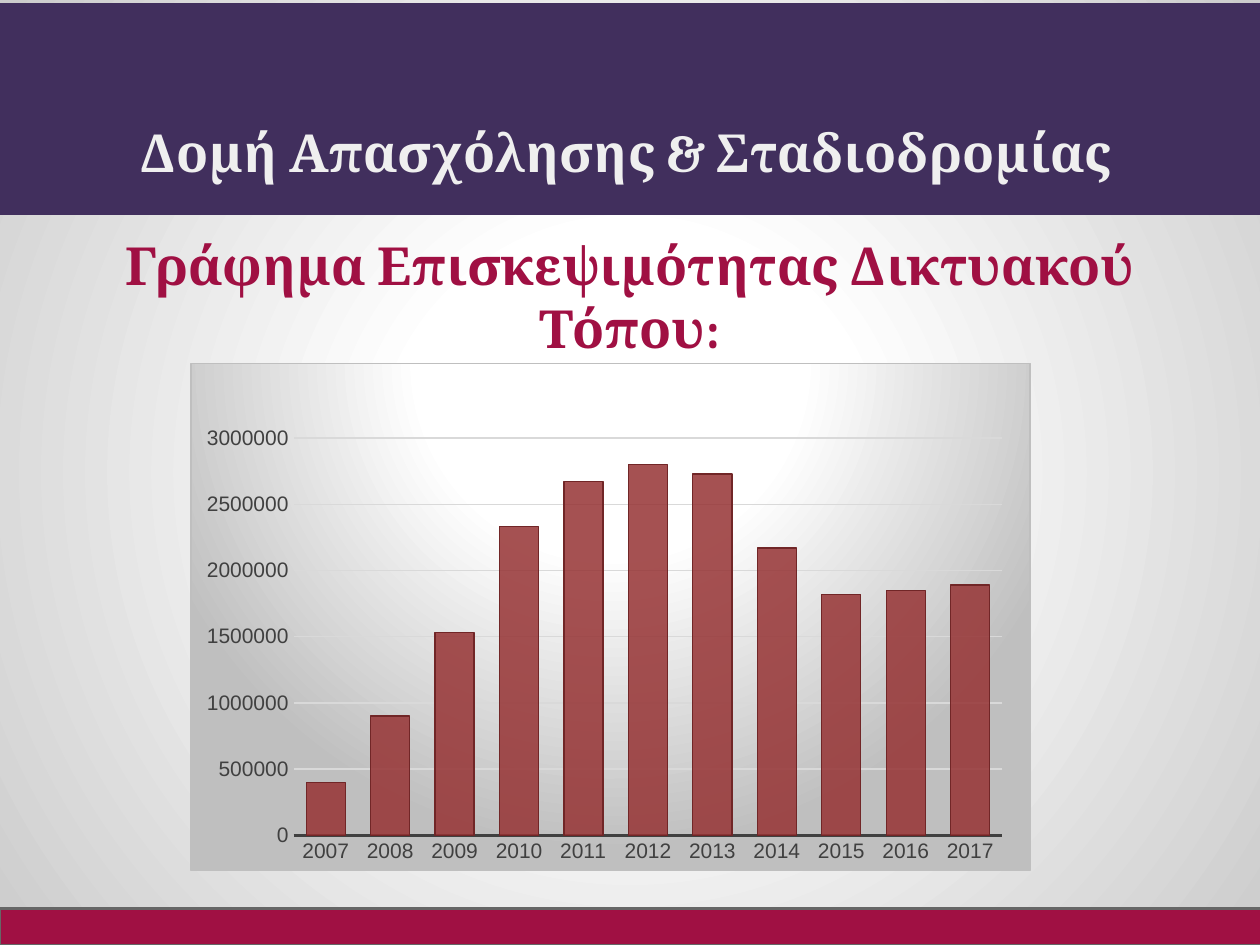
"""Build the slide with the yearly chart of website visits."""
from lxml.etree import SubElement
from pptx import Presentation
from pptx.chart.data import CategoryChartData as Data
from pptx.dml.color import RGBColor as Rgb
from pptx.enum.chart import XL_CHART_TYPE as Kind, XL_TICK_MARK as Tick
from pptx.enum.shapes import MSO_SHAPE as Shape
from pptx.enum.text import MSO_ANCHOR as Anchor, PP_ALIGN as Align
from pptx.oxml import parse_xml
from pptx.oxml.ns import nsdecls, qn
from pptx.util import Cm, Pt

hues = {
    "navy": "412F5D", "wine": "A01043", "edge": "666666", "pale": "EFEFEF",
    "bar": "963334", "rim": "712627", "text": "404040", "grid": "D9D9D9",
    "white": "FFFFFF", "mist": "CCCCCC", "gray": "BFBFBF", "black": "000000",
}
tone = {name: Rgb.from_string(code) for name, code in hues.items()}


def radial(mid, end, top, base):
    """Return the XML of a circular gradient from white to the end colour."""
    stops = [(0, "white"), (mid, "white"), (100, end)]
    marks = "".join(
        f'<a:gs pos="{pos * 1000}"><a:srgbClr val="{hues[name]}"/></a:gs>'
        for pos, name in stops)
    return (f'<a:gradFill {nsdecls("a")} rotWithShape="1"><a:gsLst>{marks}</a:gsLst>'
            f'<a:path path="circle"><a:fillToRect l="50000" t="{top * 1000}" '
            f'r="50000" b="{base * 1000}"/></a:path></a:gradFill>')


deck = Presentation()
deck.slide_width, deck.slide_height = Cm(25.4), Cm(19.05)
slide = deck.slides.add_slide(deck.slide_layouts[6])
slide.background.fill.solid()
back = slide.element.find(".//" + qn("p:bgPr"))
back.replace(back[0], parse_xml(radial(30, "mist", 50, 50)))

bands = [(0.08, 4.22, "navy", "navy"), (18.31, 0.74, "wine", "edge")]
for top, high, fill, line in bands:
    band = slide.shapes.add_shape(Shape.RECTANGLE, 0, Cm(top), Cm(25.43), Cm(high))
    band.shadow.inherit = False
    band.fill.solid()
    band.fill.fore_color.rgb = tone[fill]
    band.line.color.rgb = tone[line]
    band.line.width = Pt(1.5)

texts = [
    ("Δομή Απασχόλησης & Σταδιοδρομίας", (2.57, 0.76, 21.56, 3.18),
     Anchor.BOTTOM, Align.LEFT, "pale"),
    ("Γράφημα Επισκεψιμότητας Δικτυακού Τόπου:", (1.27, 4.45, 22.86, 13.79),
     Anchor.TOP, Align.CENTER, "wine"),
]
for words, spot, anchor, align, hue in texts:
    frame = slide.shapes.add_textbox(*map(Cm, spot)).text_frame
    frame.word_wrap = True
    frame.vertical_anchor = anchor
    frame.margin_left = frame.margin_right = Cm(0.25)
    frame.margin_top = frame.margin_bottom = Cm(0.25)
    para = frame.paragraphs[0]
    para.text = words
    para.alignment = align
    para.font.name, para.font.size, para.font.bold = "Cambria", Pt(30), True
    para.font.color.rgb = tone[hue]

data = Data()
data.categories = [str(year) for year in range(2007, 2018)]
data.add_series("Series 1", [
    400000, 900000, 1530000, 2330000, 2670000, 2800000,
    2730000, 2170000, 1820000, 1850000, 1890000])
chart = slide.shapes.add_chart(
    Kind.COLUMN_CLUSTERED, Cm(3.84), Cm(7.32), Cm(16.94), Cm(10.24), data).chart
chart.has_title = chart.has_legend = False
chart.font.name, chart.font.size = "Arial", Pt(10)
chart.font.color.rgb = tone["black"]

for axis in (chart.category_axis, chart.value_axis):
    axis.major_tick_mark = axis.minor_tick_mark = Tick.NONE
    font = axis.tick_labels.font
    font.name, font.size = "Arial", Pt(12)
    font.color.rgb = tone["text"]
base = chart.category_axis.format.line
base.color.rgb, base.width = tone["text"], Pt(1.5)
scale = chart.value_axis
scale.minimum_scale, scale.maximum_scale, scale.major_unit = 0, 3000000, 500000
scale.format.line.fill.background()
grid = scale.major_gridlines.format.line
grid.color.rgb, grid.width = tone["grid"], Pt(0.75)

plot = chart.plots[0]
plot.gap_width = 65
plot.vary_by_categories = False
bars = plot.series[0].format
bars.fill.solid()
bars.fill.fore_color.rgb = tone["bar"]
bars.line.color.rgb, bars.line.width = tone["rim"], Pt(0.75)
paint = plot.series[0]._element.find(f'{qn("c:spPr")}/{qn("a:solidFill")}')
SubElement(paint[0], qn("a:alpha"), val="85000")

root = chart.element
root.find(qn("c:chart")).addnext(parse_xml(
    f'<c:spPr {nsdecls("c", "a")}>{radial(39, "gray", -80, 180)}<a:ln w="9525">'
    f'<a:solidFill><a:srgbClr val="{hues["gray"]}"/></a:solidFill></a:ln></c:spPr>'))
area = root.find(".//" + qn("c:plotArea"))
for old in area.findall(qn("c:layout")):
    area.remove(old)
rules = [("layoutTarget", "inner"), ("xMode", "edge"), ("yMode", "edge"),
         ("x", "0.122"), ("y", "0.147"), ("w", "0.845"), ("h", "0.784")]
body = "".join(f'<c:{tag} val="{val}"/>' for tag, val in rules)
area.insert(0, parse_xml(
    f'<c:layout {nsdecls("c")}><c:manualLayout>{body}</c:manualLayout></c:layout>'))

deck.save("out.pptx")
